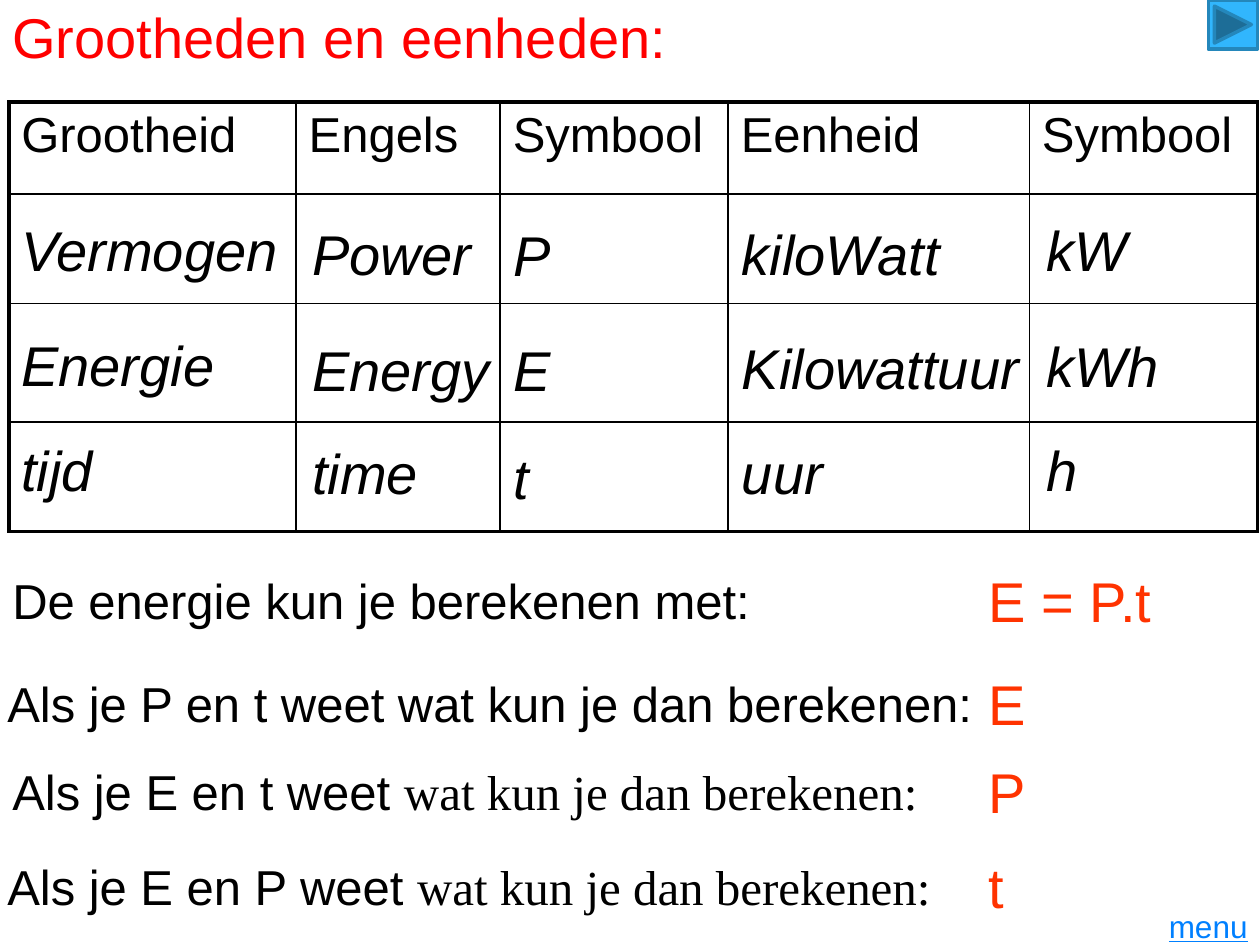
"""Build a slide with a table of quantities and units and energy formula questions."""
from lxml.etree import SubElement
from pptx import Presentation
from pptx.dml.color import RGBColor
from pptx.enum.shapes import MSO_SHAPE as SHAPE
from pptx.enum.text import MSO_ANCHOR as ANCHOR, PP_ALIGN as ALIGN
from pptx.oxml.ns import qn
from pptx.util import Inches, Pt

BLACK = RGBColor(0x00, 0x00, 0x00)
RED = RGBColor(0xFF, 0x00, 0x00)
ORANGE = RGBColor(0xFF, 0x33, 0x00)
LINK_BLUE = RGBColor(0x00, 0x80, 0xFF)
BUTTON_FILL = RGBColor(0x31, 0xB6, 0xFD)
BUTTON_LINE = RGBColor(0x24, 0x87, 0xBB)

SANS, SERIF = "Arial", "Times New Roman"
LINE_H = 0.58
THIN, THICK = 1, 2.25

HEADERS = ["Grootheid", "Engels", "Symbool", "Eenheid", "Symbool"]
COL_WIDTHS = [2.28, 1.62, 1.81, 2.39, 1.81]
ROW_HEIGHTS = [0.73, 0.87, 0.94, 0.87]

ENTRY_COLUMNS = [(0.07, 2.52), (2.38, 1.75), (3.98, 1.97), (5.79, 2.76), (8.21, 1.97)]
ENTRY_ROWS = [
    [("Vermogen", 1.69), ("Power", 1.72), ("P", 1.73), ("kiloWatt", 1.72), ("kW", 1.69)],
    [("Energie", 2.6), ("Energy", 2.64), ("E", 2.64), ("Kilowattuur", 2.62), ("kWh", 2.61)],
    [("tijd", 3.43), ("time", 3.46), ("t", 3.5), ("uur", 3.46), ("h", 3.43)],
]

ASK = "wat kun je dan berekenen:"
QUESTIONS = [
    (0, 4.47, [("De energie kun je berekenen met:", SANS)], "E = P.t"),
    (-0.04, 5.29, [("Als je P en t weet " + ASK, SANS)], "E"),
    (0, 5.99, [("Als je E en t weet ", SANS), (ASK, SERIF)], "P"),
    (-0.04, 6.74, [("Als je E en P weet ", SANS), (ASK, SERIF)], "t"),
]


def style_run(r, size, color, font=SANS, italic=False):
    """Set the font of a run."""
    r.font.name = font
    r.font.size = Pt(size)
    r.font.italic = italic
    r.font.bold = False
    r.font.color.rgb = color


def add_text(slide, left, top, width, parts, size, color, italic=False, height=LINE_H):
    """Add a one-line text box of (text, font) parts and return its paragraph."""
    sp = slide.shapes.add_textbox(Inches(left), Inches(top), Inches(width), Inches(height))
    tf = sp.text_frame
    tf.word_wrap = True
    tf.vertical_anchor = ANCHOR.MIDDLE
    p = tf.paragraphs[0]
    for text, font in parts:
        r = p.add_run()
        r.text = text
        style_run(r, size, color, font, italic)
    return p


def set_borders(cell, widths):
    """Draw black cell borders with the given point widths per side."""
    tcPr = cell._tc.get_or_add_tcPr()
    for side, width in widths.items():
        ln = SubElement(tcPr, qn(f"a:ln{side}"), w=str(Pt(width)))
        fill = SubElement(ln, qn("a:solidFill"))
        SubElement(fill, qn("a:srgbClr"), val=str(BLACK))


def add_quantity_table(slide):
    """Add the ruled table with its header row."""
    n_rows, n_cols = len(ROW_HEIGHTS), len(COL_WIDTHS)
    table = slide.shapes.add_table(
        n_rows, n_cols, Inches(0.07), Inches(0.81),
        Inches(sum(COL_WIDTHS)), Inches(sum(ROW_HEIGHTS))).table
    table.first_row = table.horz_banding = False
    for column, width in zip(table.columns, COL_WIDTHS):
        column.width = Inches(width)
    for row, height in zip(table.rows, ROW_HEIGHTS):
        row.height = Inches(height)
    for i in range(n_rows):
        for j in range(n_cols):
            cell = table.cell(i, j)
            set_borders(cell, {
                "L": THICK if j == 0 else THIN,
                "R": THICK if j == n_cols - 1 else THIN,
                "T": THICK if i == 0 else THIN,
                "B": THICK if i == n_rows - 1 else THIN,
            })
            cell.fill.background()
    for j, header in enumerate(HEADERS):
        p = table.cell(0, j).text_frame.paragraphs[0]
        p.text = header
        style_run(p.runs[0], 28, BLACK)


def add_entries(slide):
    """Place the italic entries over the table rows."""
    for row in ENTRY_ROWS:
        for (left, width), (text, top) in zip(ENTRY_COLUMNS, row):
            add_text(slide, left, top, width, [(text, SANS)], 32, BLACK, italic=True)


def add_questions(slide):
    """Add each question with its answer at the right."""
    for left, top, parts, answer in QUESTIONS:
        add_text(slide, left, top, 10, parts, 28, BLACK)
        add_text(slide, 7.75, top, 1.73, [(answer, SANS)], 32, ORANGE)


def add_menu(slide):
    """Add the underlined menu label."""
    p = add_text(slide, 9.06, 7.19, 0.94, [("menu", SANS)], 18, LINK_BLUE, height=0.31)
    p.alignment = ALIGN.RIGHT
    p.runs[0].font.underline = True


def add_next_button(slide):
    """Add the forward button in the top right corner."""
    sp = slide.shapes.add_shape(SHAPE.ACTION_BUTTON_FORWARD_OR_NEXT,
                                Inches(9.59), Inches(0), Inches(0.39), Inches(0.39))
    sp.shadow.inherit = False
    sp.fill.solid()
    sp.fill.fore_color.rgb = BUTTON_FILL
    sp.line.color.rgb = BUTTON_LINE
    sp.line.width = Pt(2)


def main():
    """Build and save the slide."""
    prs = Presentation()
    prs.slide_width, prs.slide_height = Inches(10), Inches(7.5)
    slide = prs.slides.add_slide(prs.slide_layouts[6])
    add_text(slide, 0, 0, 10, [("Grootheden en eenheden:", SANS)], 32, RED)
    add_quantity_table(slide)
    add_entries(slide)
    add_questions(slide)
    add_menu(slide)
    add_next_button(slide)
    prs.save("out.pptx")


if __name__ == "__main__":
    main()
